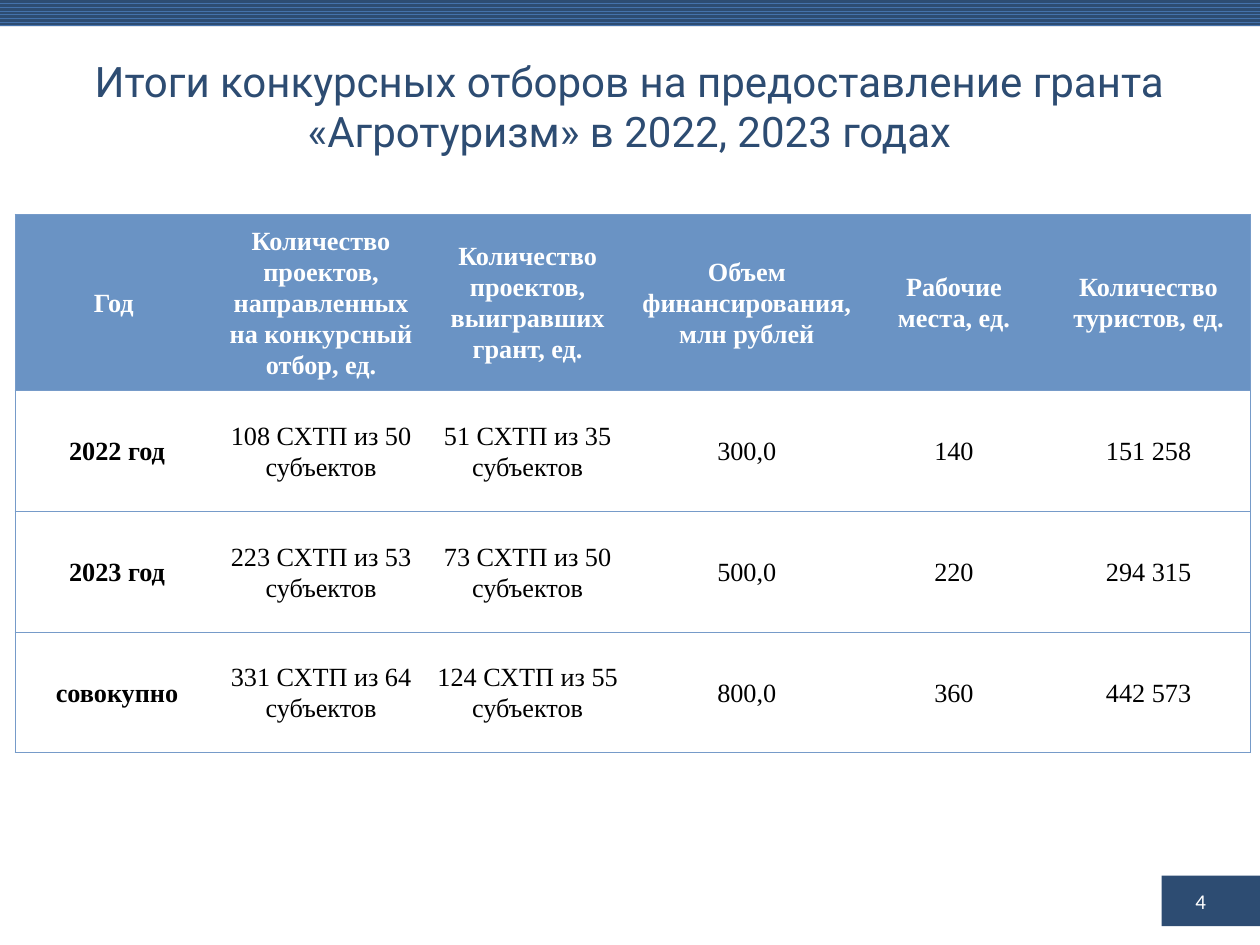
from dataclasses import dataclass
from typing import Any

from lxml.etree import SubElement
from pptx import Presentation
from pptx.dml.color import RGBColor
from pptx.enum.dml import MSO_PATTERN
from pptx.enum.shapes import MSO_SHAPE as Shape
from pptx.enum.text import MSO_ANCHOR as Anchor, MSO_AUTO_SIZE as AutoSize, PP_ALIGN as Align
from pptx.oxml.ns import qn
from pptx.util import Pt

NAVY, BLUE, HEADER_BLUE, LINE_BLUE = "2D4C72", "4472AC", "6A93C4", "769BC9"
WHITE, BLACK = "FFFFFF", "000000"
NO_INSETS = {f"margin_{side}": 0 for side in ("left", "top", "right", "bottom")}
CELL_FORMAT = {
    "margin_left": Pt(5), "margin_right": Pt(5), "margin_top": 0,
    "margin_bottom": 0, "vertical_anchor": Anchor.MIDDLE,
}


@dataclass(frozen=True)
class Box:
    left: float
    top: float
    width: float
    height: float

    def lengths(self) -> tuple:
        return Pt(self.left), Pt(self.top), Pt(self.width), Pt(self.height)


@dataclass(frozen=True)
class TextStyle:
    font: str
    size: float
    color: str
    align: Any
    bold: bool = False
    spacing: float = 1.0


HEADING = TextStyle("Roboto", 24, NAVY, Align.CENTER)
PAGE_NUMBER = TextStyle("Calibri", 12, WHITE, Align.RIGHT)
COLUMN_NAME = TextStyle("Times New Roman", 15, WHITE, Align.CENTER, True, 1.07)
ROW_NAME = TextStyle("Times New Roman", 15, BLACK, Align.CENTER, True, 1.07)
RESULT = TextStyle("Times New Roman", 15, BLACK, Align.CENTER, False, 1.07)

RESULTS = [
    ["Год ", "Количество проектов, направленных на конкурсный отбор, ед.",
     "Количество проектов, выигравших грант, ед.",
     "Объем финансирования, млн рублей", "Рабочие места, ед.", "Количество туристов, ед."],
    ["2022 год", "108 СХТП из 50 субъектов", "51 СХТП из 35 субъектов", "300,0", "140", "151 258"],
    ["2023 год", "223 СХТП из 53 субъектов", "73 СХТП из 50 субъектов", "500,0", "220", "294 315"],
    ["совокупно", "331 СХТП из 64 субъектов", "124 СХТП из 55 субъектов", "800,0", "360", "442 573"],
]
COLUMN_WIDTHS = [116.6, 116.6, 119.5, 131, 105.8, 116.6]
ROW_HEIGHTS = [100.8, 69, 69, 69]


def rgb(color: str) -> RGBColor:
    return RGBColor.from_string(color)


def apply(target: Any, values: dict) -> None:
    for name, value in values.items():
        setattr(target, name, value)


def write(frame: Any, text: str, style: TextStyle) -> None:
    paragraph = frame.paragraphs[0]
    apply(paragraph, {"alignment": style.align, "line_spacing": style.spacing})
    run = paragraph.add_run()
    run.text = text
    apply(run.font, {"name": style.font, "size": Pt(style.size), "bold": style.bold})
    run.font.color.rgb = rgb(style.color)


def add_bar(slide: Any, box: Box) -> Any:
    bar = slide.shapes.add_shape(Shape.RECTANGLE, *box.lengths())
    bar.shadow.inherit = False
    bar.line.fill.background()
    return bar


def draw_borders(cell: Any, visible: dict) -> None:
    properties = cell._tc.get_or_add_tcPr()
    for side, shown in visible.items():
        line = SubElement(properties, qn(f"a:ln{side}"), w=str(Pt(0.5)))
        if shown:
            fill = SubElement(line, qn("a:solidFill"))
            SubElement(fill, qn("a:srgbClr"), val=LINE_BLUE)
        else:
            SubElement(line, qn("a:noFill"))


def add_results(slide: Any, box: Box) -> None:
    table = slide.shapes.add_table(len(RESULTS), len(COLUMN_WIDTHS), *box.lengths()).table
    table.horz_banding = False
    for column, width in zip(table.columns, COLUMN_WIDTHS):
        column.width = Pt(width)
    for row, height in zip(table.rows, ROW_HEIGHTS):
        row.height = Pt(height)
    last = len(COLUMN_WIDTHS) - 1
    for r, texts in enumerate(RESULTS):
        for c, text in enumerate(texts):
            cell = table.cell(r, c)
            apply(cell, CELL_FORMAT)
            draw_borders(cell, {"L": c == 0, "R": c == last, "T": True, "B": True})
            if r == 0:
                cell.fill.solid()
                cell.fill.fore_color.rgb = rgb(HEADER_BLUE)
                style = COLUMN_NAME
            else:
                cell.fill.background()
                style = ROW_NAME if c == 0 else RESULT
            write(cell.text_frame, text, style)


def main() -> None:
    deck = Presentation()
    apply(deck, {"slide_width": Pt(720), "slide_height": Pt(540)})
    slide = deck.slides.add_slide(deck.slide_layouts[5])

    top_band = add_bar(slide, Box(0, 0, 720, 15))
    top_band.fill.patterned()
    top_band.fill.pattern = MSO_PATTERN.ZIG_ZAG
    top_band.fill.fore_color.rgb = rgb(BLUE)
    top_band.fill.back_color.rgb = rgb(NAVY)

    number_plate = add_bar(slide, Box(663.8, 500.4, 56.2, 28.8))
    number_plate.fill.solid()
    number_plate.fill.fore_color.rgb = rgb(NAVY)

    heading = slide.shapes.title
    left, top, width, height = Box(6.5, 31.7, 706.3, 58.3).lengths()
    apply(heading, {"left": left, "top": top, "width": width, "height": height})
    apply(heading.text_frame, {**NO_INSETS, "word_wrap": True, "vertical_anchor": Anchor.TOP,
                               "auto_size": AutoSize.NONE})
    write(heading.text_frame, "Итоги конкурсных отборов на предоставление гранта "
          "«Агротуризм» в 2022, 2023 годах", HEADING)

    page = slide.shapes.add_textbox(*Box(534.2, 500.4, 162, 28.8).lengths())
    apply(page.text_frame, {"word_wrap": True, "vertical_anchor": Anchor.MIDDLE})
    write(page.text_frame, "4", PAGE_NUMBER)

    add_results(slide, Box(8.6, 122.4, sum(COLUMN_WIDTHS), sum(ROW_HEIGHTS)))
    deck.save("out.pptx")


if __name__ == "__main__":
    main()
